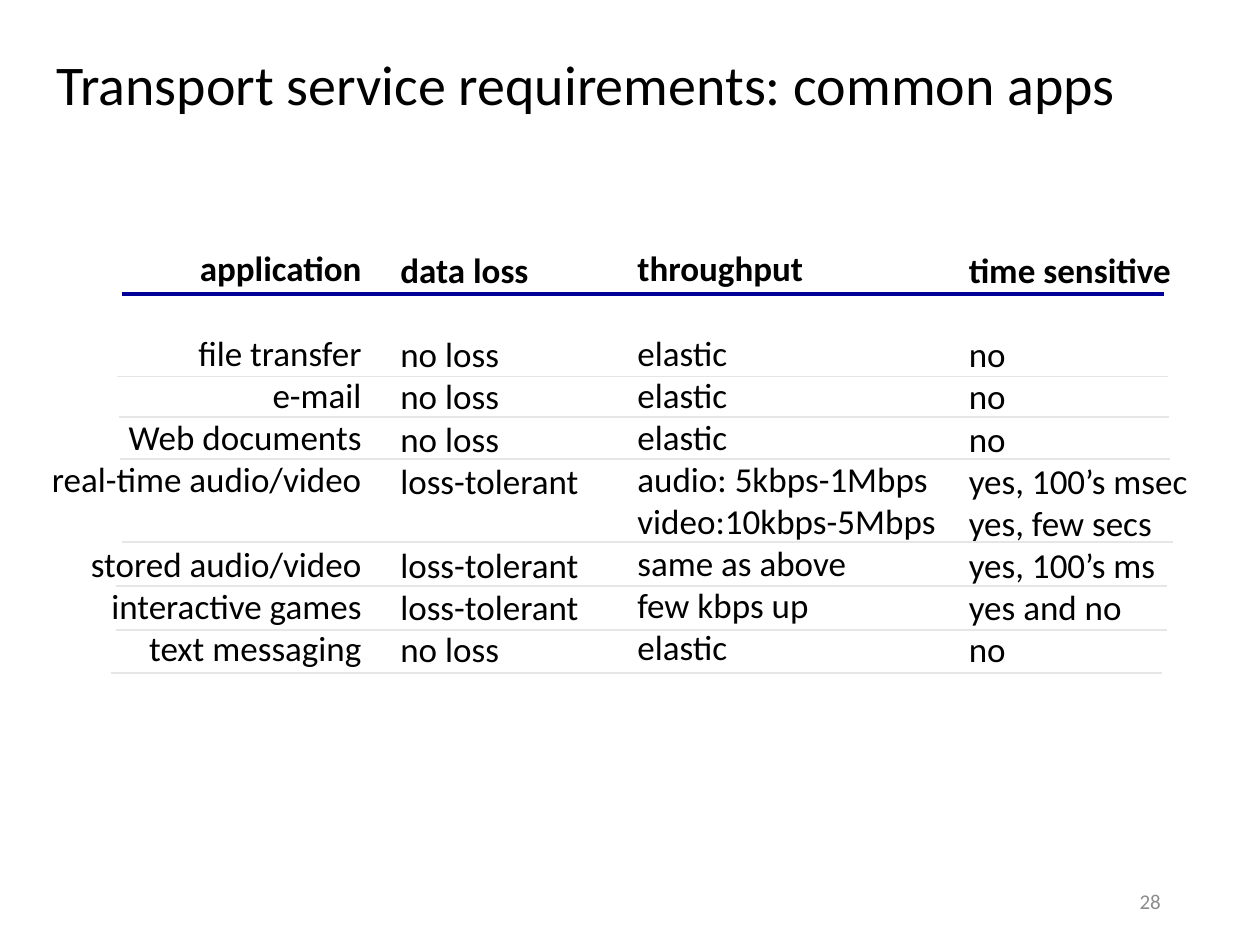
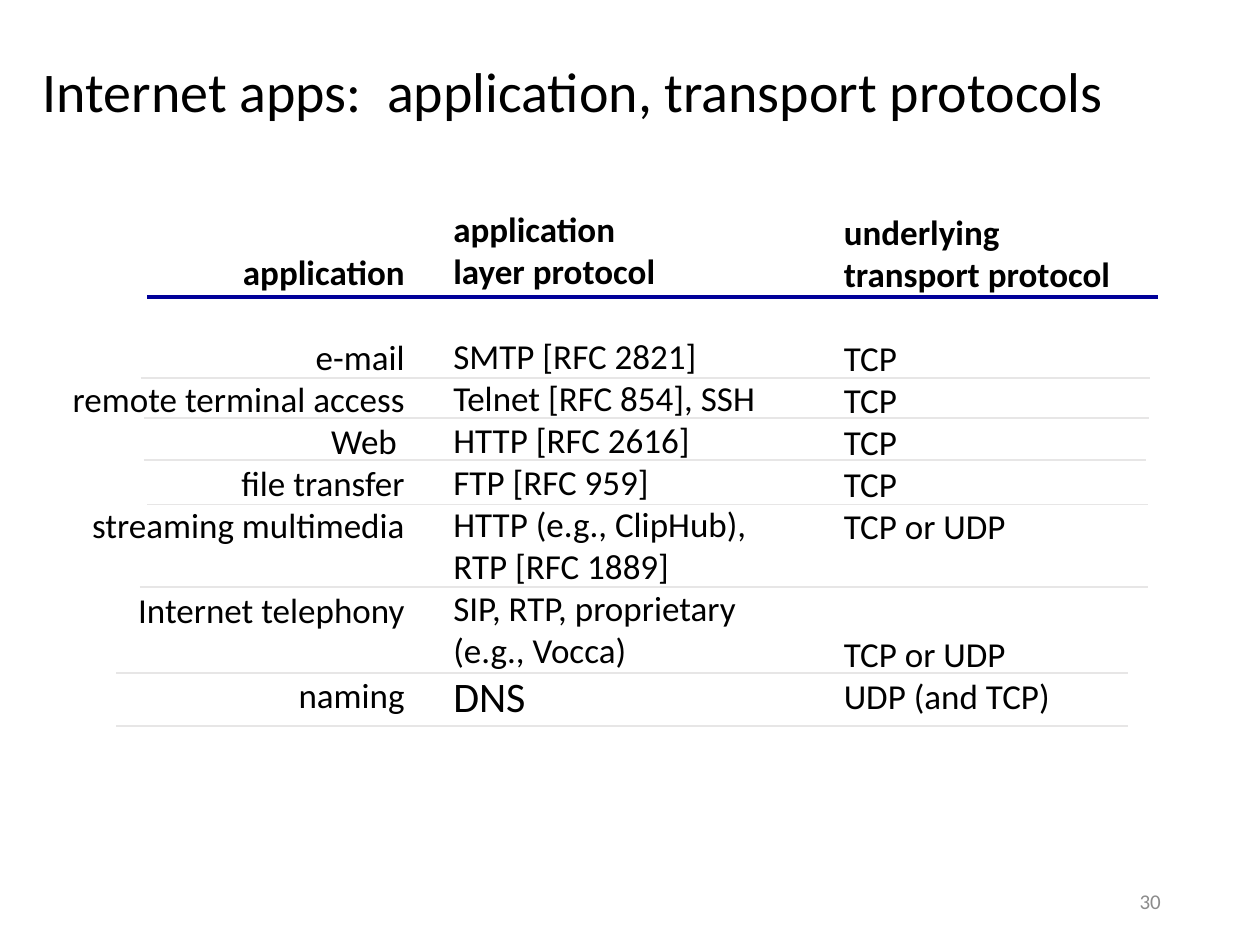
from lxml import etree
from pptx import Presentation
from pptx.dml.color import RGBColor
from pptx.enum import shapes, text
from pptx.oxml.ns import qn
from pptx.util import Cm, Pt

BLACK = RGBColor(0x00, 0x00, 0x00)
NAVY = RGBColor(0x00, 0x00, 0x99)
PALE_GRAY = RGBColor(0xE7, 0xE6, 0xE6)
NUMBER_GRAY = RGBColor(0x8C, 0x8C, 0x8C)
FONT = "Calibri"
BODY_SIZE = 20
ROW_PITCH = 24.4  # points taken by one body line
LEFT, RIGHT = text.PP_ALIGN.LEFT, text.PP_ALIGN.RIGHT
NUMBER_BOX = (17.93, 17.65, 5.72, 1.02)

# Lengths are in centimetres. A column is (left, top, width, alignment, lines):
# its lines up to the first GAP are the heading, and each GAP skips one row.
# A rule is (left, right, y).
GAP = None
SLIDES = [
    {
        "title": "Transport service requirements: common apps",
        "title_box": (0.89, 0.64, 22.78, 2.26),
        "number": "28",
        "columns": [
            (0.48, 4.85, 7.06, RIGHT, [
                "application", GAP, "file transfer", "e-mail", "Web documents",
                "real-time audio/video", GAP, "stored audio/video",
                "interactive games", "text messaging"]),
            (7.82, 4.88, 4.3, LEFT, [
                "data loss", GAP, "no loss", "no loss", "no loss",
                "loss-tolerant", GAP, "loss-tolerant", "loss-tolerant", "no loss"]),
            (12.6, 4.85, 7.16, LEFT, [
                "throughput", GAP, "elastic", "elastic", "elastic",
                "audio: 5kbps-1Mbps", "video:10kbps-5Mbps", "same as above",
                "few kbps up", "elastic"]),
            (19.28, 4.88, 5.74, LEFT, [
                "time sensitive", GAP, "no", "no", "no", "yes, 100’s msec",
                "yes, few secs", "yes, 100’s ms", "yes and no", "no"]),
        ],
        "heading_rule": (2.46, 23.47, 5.93),
        "row_rules": [
            (2.36, 23.54, 7.59), (2.39, 23.57, 8.41), (2.41, 23.59, 9.25),
            (2.46, 23.64, 10.92), (2.34, 23.52, 11.81), (2.34, 23.52, 12.7),
            (2.24, 23.42, 13.56)],
    },
    {
        "title": "Internet apps:  application, transport protocols",
        "title_box": (0.61, 0.74, 24.31, 2.34),
        "number": "30",
        "columns": [
            (1.12, 4.93, 7.29, RIGHT, [
                "application", GAP, "e-mail", "remote terminal access", "Web ",
                "file transfer", "streaming multimedia", GAP,
                "Internet telephony", GAP, "naming"]),
            (8.89, 4.06, 6.81, LEFT, [
                "application", "layer protocol", GAP, "SMTP [RFC 2821]",
                "Telnet [RFC 854], SSH", "HTTP [RFC 2616]", "FTP [RFC 959]",
                "HTTP (e.g., ClipHub),\nRTP [RFC 1889]",
                "SIP, RTP, proprietary", "(e.g., Vocca)", "DNS"]),
            (16.76, 4.11, 7.29, LEFT, [
                "underlying", "transport protocol", GAP, "TCP", "TCP", "TCP",
                "TCP", "TCP or UDP", GAP, GAP, "TCP or UDP", "UDP (and TCP)"]),
        ],
        "heading_rule": (2.97, 23.34, 5.98),
        "row_rules": [
            (2.84, 23.19, 7.62), (2.9, 23.16, 8.43), (2.9, 23.11, 9.27),
            (2.97, 23.14, 10.17), (2.82, 23.14, 11.84), (2.34, 22.73, 13.56),
            (2.34, 22.73, 14.63)],
    },
]
LARGER_LINES = {"DNS": 24}


def add_text_frame(slide, box, anchor=text.MSO_ANCHOR.TOP):
    frame = slide.shapes.add_textbox(*map(Cm, box)).text_frame
    frame.word_wrap = True
    frame.vertical_anchor = anchor
    return frame


def write(paragraph, content, size, color=BLACK, bold=False, alignment=LEFT):
    paragraph.text = content
    paragraph.alignment = alignment
    font = paragraph.font
    font.name, font.size, font.bold = FONT, Pt(size), bold
    font.color.rgb = color


def add_column(slide, left, top, width, alignment, lines):
    height = len(lines) * ROW_PITCH / 72 * 2.54 + 0.25
    frame = add_text_frame(slide, (left, top, width, height))
    paragraph = frame.paragraphs[0]
    heading_end = lines.index(GAP)
    skipped = 0
    for index, line in enumerate(lines):
        if line is GAP:
            skipped += 1
            continue
        if index:
            paragraph = frame.add_paragraph()
        write(paragraph, line, LARGER_LINES.get(line, BODY_SIZE),
              bold=index < heading_end, alignment=alignment)
        if skipped:
            paragraph.space_before = Pt(skipped * ROW_PITCH)
            skipped = 0


def add_rule(slide, left, right, y, color, width):
    rule = slide.shapes.add_connector(
        shapes.MSO_CONNECTOR.STRAIGHT, Cm(left), Cm(y), Cm(right), Cm(y))
    rule.line.color.rgb = color
    rule.line.width = Pt(width)
    etree.SubElement(rule._element.spPr, qn("a:effectLst"))


def add_slide(presentation, content):
    slide = presentation.slides.add_slide(presentation.slide_layouts[6])
    middle = text.MSO_ANCHOR.MIDDLE
    title = add_text_frame(slide, content["title_box"], middle).paragraphs[0]
    write(title, content["title"], 32)
    title.line_spacing = 0.9
    for column in content["columns"]:
        add_column(slide, *column)
    add_rule(slide, *content["heading_rule"], NAVY, 2.25)
    for rule in content["row_rules"]:
        add_rule(slide, *rule, PALE_GRAY, 1)
    number = add_text_frame(slide, NUMBER_BOX, middle).paragraphs[0]
    write(number, content["number"], 12, NUMBER_GRAY, alignment=RIGHT)


def main():
    presentation = Presentation()
    presentation.slide_width, presentation.slide_height = Cm(25.4), Cm(19.05)
    for content in SLIDES:
        add_slide(presentation, content)
    presentation.save("out.pptx")


if __name__ == "__main__":
    main()
